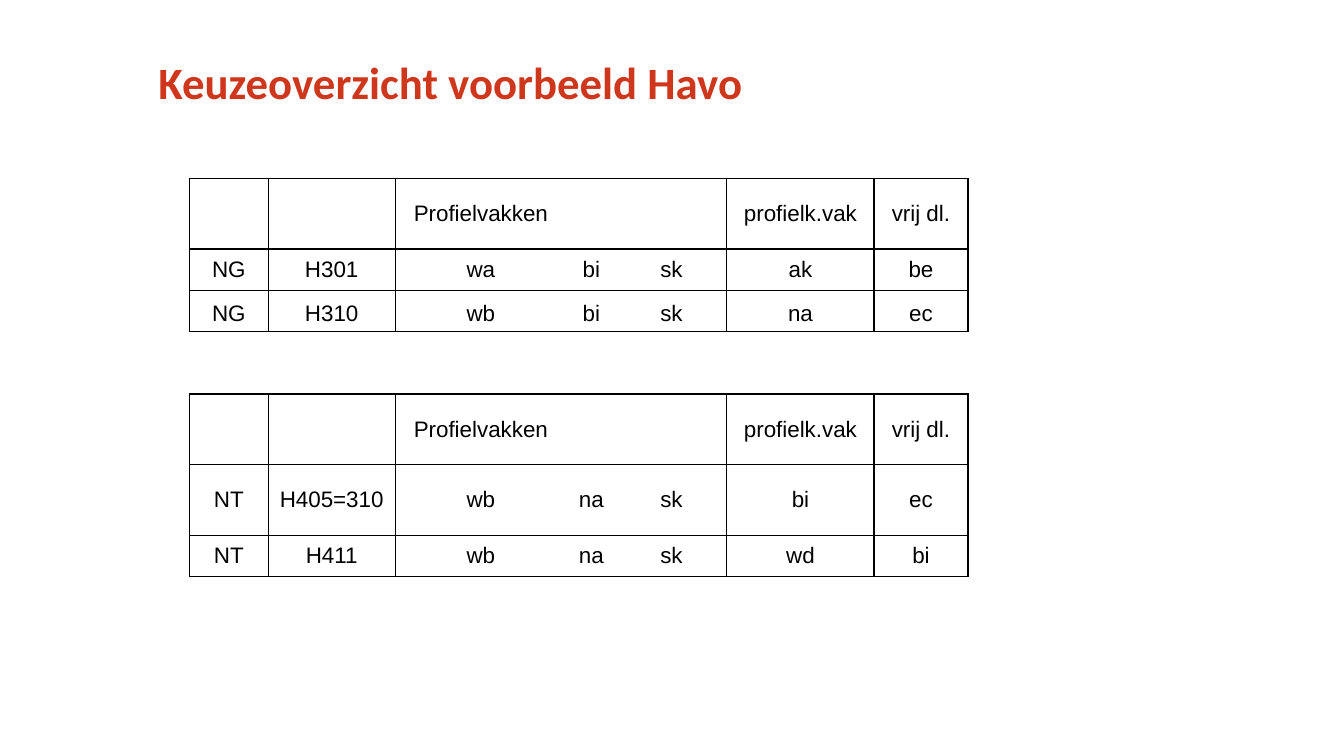
from dataclasses import dataclass

from lxml.etree import SubElement
from pptx import Presentation
from pptx.dml.color import RGBColor
from pptx.enum.text import MSO_ANCHOR, MSO_AUTO_SIZE, PP_ALIGN
from pptx.oxml.ns import qn
from pptx.util import Emu, Pt

COLORS = {"title": "CE371C", "ink": "000000"}
COL_WIDTHS = [78, 126, 170, 49, 110, 146, 93]
SUBJECT_COLS = range(2, 5)  # the profile subjects share one frame
LAST_COL = len(COL_WIDTHS) - 1


@dataclass
class Row:
    height: int
    texts: tuple[str, ...]
    anchor: MSO_ANCHOR = MSO_ANCHOR.MIDDLE


HEADER = Row(70, ("", "", "Profielvakken", "", "", "profielk.vak", "vrij dl."))
GAP = Row(62, ("",) * len(COL_WIDTHS))
ROWS = [
    HEADER,
    Row(41, ("NG", "H301", "wa", "bi", "sk", "ak", "be")),
    Row(41, ("NG", "H310", "wb", "bi", "sk", "na", "ec"), MSO_ANCHOR.BOTTOM),
    GAP,
    HEADER,
    Row(70, ("NT", "H405=310", "wb", "na", "sk", "bi", "ec")),
    Row(41, ("NT", "H411", "wb", "na", "sk", "wd", "bi")),
]


def px(n: int) -> Emu:
    """100 px to the inch."""
    return Emu(n * 9144)


def write(tf, text: str, *, size: int, font: str, color: str,
          bold: bool = False, align=PP_ALIGN.LEFT, spacing: float = 1.0) -> None:
    p = tf.paragraphs[0]
    p.alignment = align
    p.line_spacing = spacing
    p.font.size = Pt(size)
    if text:
        r = p.add_run()
        r.text = text
        r.font.size, r.font.name, r.font.bold = Pt(size), font, bold
        r.font.color.rgb = RGBColor.from_string(COLORS[color])


def set_borders(cell, widths: dict[str, int]) -> None:
    """Draw the sides L, R, T, B in points; 0 means no line."""
    tc_pr = cell._tc.get_or_add_tcPr()
    for side in "LRTB":
        ln = SubElement(tc_pr, qn(f"a:ln{side}"), w=str(Pt(widths[side])))
        if widths[side]:
            fill = SubElement(ln, qn("a:solidFill"))
            SubElement(fill, qn("a:srgbClr"), val=COLORS["ink"])
        else:
            SubElement(ln, qn("a:noFill"))


def border_widths(row: Row, col: int) -> dict[str, int]:
    if row is GAP:
        return {"L": 0, "R": 0, "T": 1, "B": 1}
    left = 0 if col in SUBJECT_COLS[1:] else 1
    right = 0 if col in SUBJECT_COLS[:-1] else 2 if col == LAST_COL else 1
    return {"L": left, "R": right, "T": 1, "B": 1}


def add_title(slide, text: str) -> None:
    sp = slide.shapes.title
    sp.left, sp.top, sp.width, sp.height = px(147), px(55), px(1095), px(56)
    tf = sp.text_frame
    tf.auto_size = MSO_AUTO_SIZE.NONE
    tf.vertical_anchor = MSO_ANCHOR.TOP
    write(tf, text, size=32, font="Calibri", color="title", bold=True, spacing=0.9)


def add_choices(slide, left: int, top: int) -> None:
    height = sum(row.height for row in ROWS)
    table = slide.shapes.add_table(len(ROWS), len(COL_WIDTHS), px(left), px(top),
                                   px(sum(COL_WIDTHS)), px(height)).table
    table.first_row = table.horz_banding = False
    for column, width in zip(table.columns, COL_WIDTHS):
        column.width = px(width)
    for i, row in enumerate(ROWS):
        table.rows[i].height = px(row.height)
        for j, text in enumerate(row.texts):
            cell = table.cell(i, j)
            cell.vertical_anchor = row.anchor
            write(cell.text_frame, text, size=16, font="Arial", color="ink",
                  align=PP_ALIGN.CENTER)
            set_borders(cell, border_widths(row, j))
            cell.fill.background()


def main() -> None:
    prs = Presentation()
    prs.slide_width, prs.slide_height = px(1333), px(750)
    slide = prs.slides.add_slide(prs.slide_layouts[5])

    # Title
    add_title(slide, "Keuzeoverzicht voorbeeld Havo")

    # Subject choices per profile
    add_choices(slide, 188, 177)

    prs.save("out.pptx")


if __name__ == "__main__":
    main()
